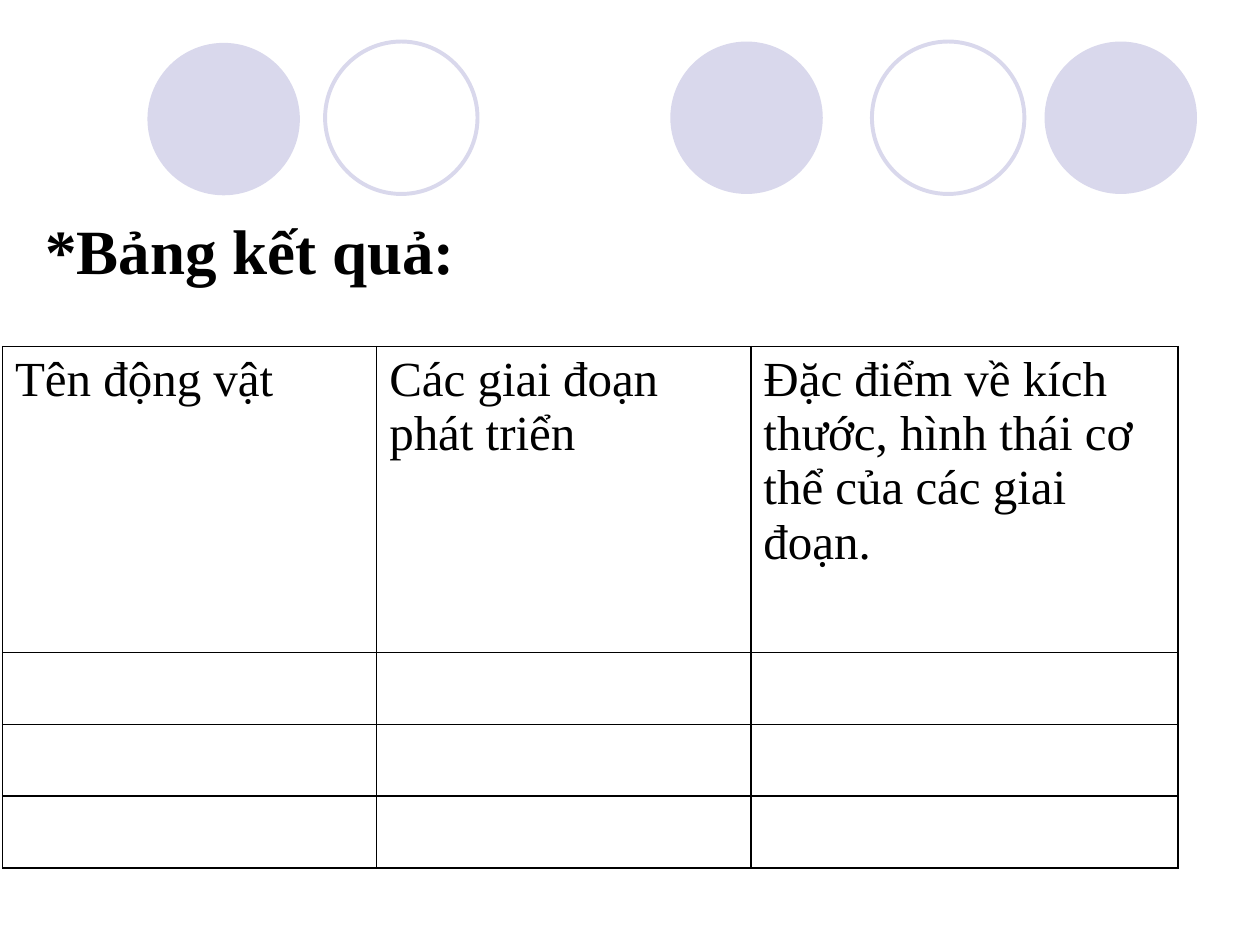
from lxml.etree import SubElement
from pptx import Presentation
from pptx.dml.color import RGBColor
from pptx.enum.shapes import MSO_SHAPE as Shape
from pptx.enum.text import MSO_ANCHOR as Anchor, PP_ALIGN as Align
from pptx.oxml.ns import qn
from pptx.util import Inches, Pt

LAVENDER = RGBColor(0xD9, 0xD8, 0xEC)
BLACK = RGBColor(0, 0, 0)
FONT = "Times New Roman"

CIRCLE_SIZE = 1.21
# left, top, filled
CIRCLES = [
    (5.32, 0.33, True),
    (8.29, 0.33, True),
    (1.17, 0.34, True),
    (6.92, 0.33, False),
    (2.58, 0.33, False),
]

HEADERS = [
    "Tên động vật",
    "Các giai đoạn phát triển",
    "Đặc điểm về kích thước, hình thái cơ thể của các giai đoạn.",
]
COLUMN_WIDTHS = [2.97, 2.97, 3.39]
ROW_HEIGHTS = [2.43, 0.57, 0.57, 0.57]


def set_all(target, values):
    for name, value in values.items():
        setattr(target, name, value)


def write(paragraph, text, size, bold=False):
    run = paragraph.add_run()
    run.text = text
    set_all(run.font, {"name": FONT, "size": Pt(size), "bold": bold})
    run.font.color.rgb = BLACK


def add_circle(slide, left, top, filled):
    circle = slide.shapes.add_shape(
        Shape.OVAL, Inches(left), Inches(top), Inches(CIRCLE_SIZE), Inches(CIRCLE_SIZE)
    )
    circle.shadow.inherit = False
    if filled:
        circle.fill.solid()
        circle.fill.fore_color.rgb = LAVENDER
        circle.line.fill.background()
    else:
        circle.fill.background()
        circle.line.color.rgb = LAVENDER
        circle.line.width = Pt(2.25)


def add_title(slide, text):
    box = slide.shapes.add_textbox(Inches(0.17), Inches(1.58), Inches(3.55), Inches(0.76))
    frame = box.text_frame
    set_all(frame, {"word_wrap": True, "vertical_anchor": Anchor.TOP})
    for side in ("left", "right", "top", "bottom"):
        setattr(frame, f"margin_{side}", Inches(0.1))
    paragraph = frame.paragraphs[0]
    set_all(paragraph, {"alignment": Align.CENTER, "space_before": Pt(6)})
    paragraph.font.size = Pt(36)
    properties = paragraph._p.get_or_add_pPr()
    properties.set("marL", str(Inches(0.08)))
    properties.set("indent", "0")
    write(paragraph, text, 36, bold=True)


def add_borders(cell):
    properties = cell._tc.get_or_add_tcPr()
    for tag in ("a:lnL", "a:lnR", "a:lnT", "a:lnB"):
        line = SubElement(properties, qn(tag), w=str(Pt(1)))
        fill = SubElement(line, qn("a:solidFill"))
        SubElement(fill, qn("a:srgbClr"), val=str(BLACK))


def add_result_table(slide):
    table = slide.shapes.add_table(
        len(ROW_HEIGHTS), len(COLUMN_WIDTHS), Inches(0.02), Inches(2.75),
        Inches(sum(COLUMN_WIDTHS)), Inches(sum(ROW_HEIGHTS)),
    ).table
    set_all(table, {"first_row": False, "horz_banding": False})
    for column, width in zip(table.columns, COLUMN_WIDTHS):
        column.width = Inches(width)
    for row, height in zip(table.rows, ROW_HEIGHTS):
        row.height = Inches(height)
    # Borders come before the fill in the cell properties
    for cell in table.iter_cells():
        add_borders(cell)
        cell.fill.background()
    for column_index, header in enumerate(HEADERS):
        write(table.cell(0, column_index).text_frame.paragraphs[0], header, 28)


def main():
    presentation = Presentation()
    presentation.slide_width = Inches(10)
    presentation.slide_height = Inches(7.5)
    slide = presentation.slides.add_slide(presentation.slide_layouts[6])

    # Decorative circles
    for left, top, filled in CIRCLES:
        add_circle(slide, left, top, filled)

    # Title and table
    add_title(slide, "*Bảng kết quả:")
    add_result_table(slide)

    presentation.save("out.pptx")


if __name__ == "__main__":
    main()
